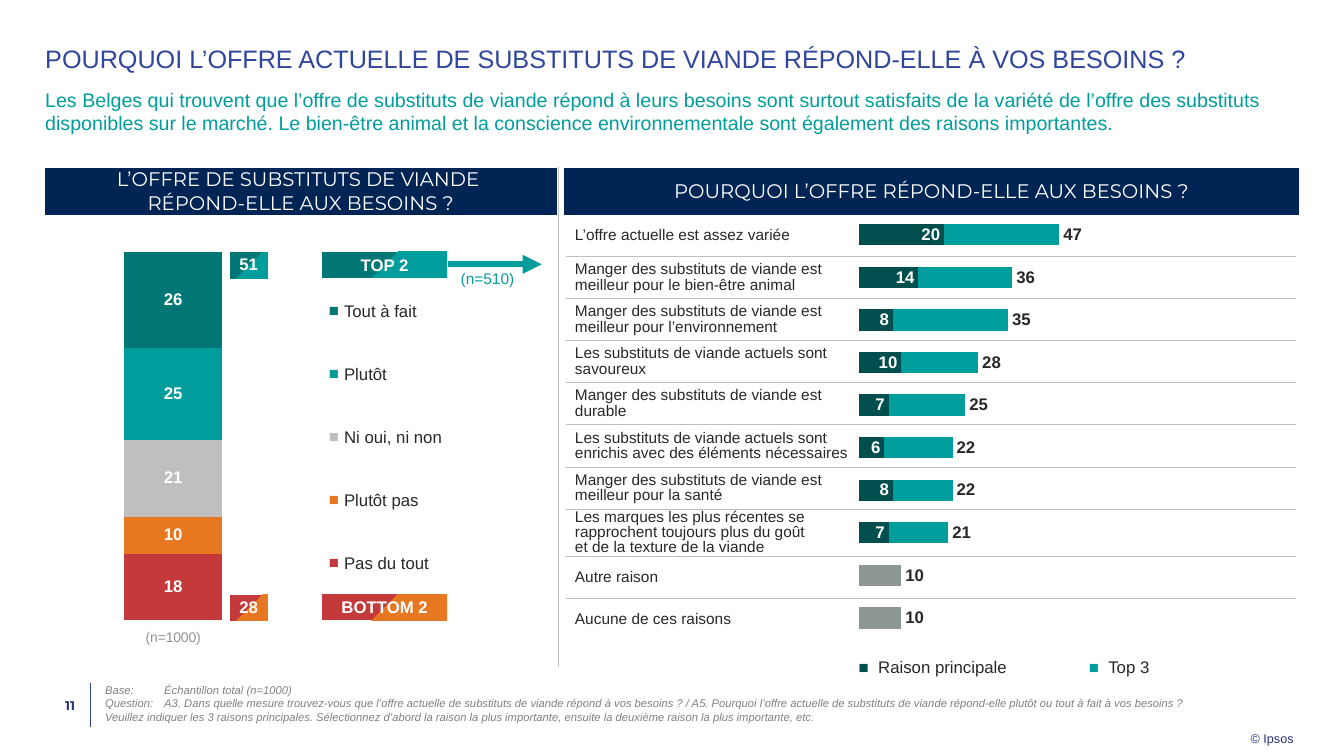
from dataclasses import dataclass

from lxml.etree import SubElement
from pptx import Presentation
from pptx.chart.data import CategoryChartData
from pptx.dml.color import RGBColor
from pptx.enum.chart import XL_CHART_TYPE, XL_LABEL_POSITION, XL_TICK_LABEL_POSITION, XL_TICK_MARK
from pptx.enum.shapes import MSO_CONNECTOR, MSO_SHAPE
from pptx.enum.text import MSO_ANCHOR, MSO_AUTO_SIZE, PP_ALIGN
from pptx.oxml import parse_xml
from pptx.oxml.ns import nsdecls, qn
from pptx.util import Cm, Pt


@dataclass(frozen=True)
class Theme:
    body_font: str = "Arial"
    heading_font: str = "Montserrat"
    title: str = "2F469C"
    navy: str = "002554"
    footer_blue: str = "233475"
    ink: str = "282828"
    note: str = "808080"
    axis: str = "939393"
    rule: str = "BFBFBF"
    white: str = "FFFFFF"
    dark_teal: str = "007675"
    teal: str = "009D9C"
    deep_teal: str = "004E4E"
    grey_bar: str = "8E9696"
    orange: str = "E87722"
    red: str = "C43A3A"
    title_size: int = 18
    heading_size: int = 14
    label_size: int = 12
    reason_size: int = 11
    axis_size: int = 10
    small_size: int = 9
    note_size: int = 8


THEME = Theme()
NO_STYLE = "{2D5ABB26-0587-4C30-8999-92F81FD0307C}"

SATISFACTION = [
    ("Tout à fait", 26, THEME.dark_teal),
    ("Plutôt", 25, THEME.teal),
    ("Ni oui, ni non", 21, THEME.rule),
    ("Plutôt pas", 10, THEME.orange),
    ("Pas du tout", 18, THEME.red),
]
REASONS = [
    ("L’offre actuelle est assez variée", 47, 20),
    ("Manger des substituts de viande est meilleur pour le bien-être animal", 36, 14),
    ("Manger des substituts de viande est meilleur pour l’environnement", 35, 8),
    ("Les substituts de viande actuels sont savoureux", 28, 10),
    ("Manger des substituts de viande est durable", 25, 7),
    ("Les substituts de viande actuels sont enrichis avec des éléments nécessaires", 22, 6),
    ("Manger des substituts de viande est meilleur pour la santé", 22, 8),
    ("Les marques les plus récentes se rapprochent toujours plus du goût\n"
     "et de la texture de la viande", 21, 7),
    ("Autre raison", 10, None),
    ("Aucune de ces raisons", 10, None),
]


def rgb(color):
    return RGBColor.from_string(color)


def style_font(font, size, color, bold=False, italic=False, name=THEME.body_font):
    font.size, font.bold, font.italic, font.name = Pt(size), bold, italic, name
    font.color.rgb = rgb(color)


def write(frame, text, size=THEME.label_size, color=THEME.ink, align=PP_ALIGN.LEFT,
          spacing=None, tab=None, marker=None, **font_format):
    """Fill a text frame, one paragraph per line, with an optional coloured marker."""
    for index, line in enumerate(text.split("\n")):
        paragraph = frame.add_paragraph() if index else frame.paragraphs[0]
        paragraph.alignment = align
        if spacing:
            paragraph.line_spacing = spacing
        if tab:
            tabs = SubElement(paragraph._p.get_or_add_pPr(), qn("a:tabLst"))
            SubElement(tabs, qn("a:tab"), pos=str(Cm(tab)), algn="l")
        for part, part_color in ((("■  ", marker),) if marker else ()) + ((line, color),):
            run = paragraph.add_run()
            run.text = part
            style_font(run.font, size, part_color, **font_format)


def set_margins(owner, left=0, top=0, right=0, bottom=0):
    owner.margin_left, owner.margin_top = Cm(left), Cm(top)
    owner.margin_right, owner.margin_bottom = Cm(right), Cm(bottom)


def add_text(slide, box, text, anchor=MSO_ANCHOR.TOP, margins=(0, 0, 0, 0), wrap=True, **text_format):
    frame = slide.shapes.add_textbox(*map(Cm, box)).text_frame
    frame.word_wrap, frame.vertical_anchor = wrap, anchor
    set_margins(frame, *margins)
    write(frame, text, **text_format)


def add_line(slide, start, end, color, width, arrow=False):
    line = slide.shapes.add_connector(MSO_CONNECTOR.STRAIGHT, *map(Cm, start + end))
    line.line.color.rgb, line.line.width = rgb(color), Pt(width)
    if arrow:
        SubElement(line.line._get_or_add_ln(), qn("a:tailEnd"), type="triangle")
    SubElement(line._element.spPr, qn("a:effectLst"))


def add_badge(slide, box, colors, text=None):
    """Rectangle split diagonally between two colours."""
    badge = slide.shapes.add_shape(MSO_SHAPE.RECTANGLE, *map(Cm, box))
    badge.shadow.inherit = False
    badge.line.fill.background()
    badge.fill.gradient()
    badge.fill.gradient_angle = 315
    for stop, color in zip(badge.fill.gradient_stops, colors):
        stop.position, stop.color.rgb = 0.5, rgb(color)
    if text:
        badge.text_frame.vertical_anchor = MSO_ANCHOR.MIDDLE
        set_margins(badge.text_frame)
        write(badge.text_frame, text, color=THEME.white, align=PP_ALIGN.CENTER, bold=True)


def add_grid(slide, left, top, widths, heights):
    """Unstyled table with middle-anchored, unfilled cells."""
    grid = slide.shapes.add_table(len(heights), len(widths), Cm(left), Cm(top),
                                  Cm(sum(widths)), Cm(sum(heights))).table
    grid.first_row = grid.horz_banding = False
    grid._tbl.tblPr.find(qn("a:tableStyleId")).text = NO_STYLE
    for column, width in zip(grid.columns, widths):
        column.width = Cm(width)
    for row, height in zip(grid.rows, heights):
        row.height = Cm(height)
    for cell in grid.iter_cells():
        cell.fill.background()
        cell.vertical_anchor = MSO_ANCHOR.MIDDLE
        set_margins(cell)
    return grid


def set_border(cell, side, color, width):
    border = parse_xml(f'<a:{side} {nsdecls("a")} w="{Pt(width)}"><a:solidFill>'
                       f'<a:srgbClr val="{color}"/></a:solidFill></a:{side}>')
    properties = cell._tc.get_or_add_tcPr()
    properties.insert(len(properties.findall(qn("a:lnL"))) + len(properties.findall(qn("a:lnT"))), border)


def add_bars(slide, box, kind, categories, series, gap, layout):
    """Series are (values, colour, label colour, label position, label format)."""
    data = CategoryChartData()
    data.categories = categories
    for number, (values, *_) in enumerate(series, 1):
        data.add_series(f"Series {number}", values)
    chart = slide.shapes.add_chart(kind, *map(Cm, box), data).chart
    chart.has_legend = chart.has_title = False
    style_font(chart.font, THEME.axis_size, THEME.axis)
    plot = chart.plots[0]
    plot.gap_width, plot.overlap, plot.vary_by_categories = gap, 100, False
    for bars, (_, color, label_color, position, number_format) in zip(plot.series, series):
        bars.format.fill.solid()
        bars.format.fill.fore_color.rgb = rgb(color)
        labels = bars.data_labels
        labels.show_value, labels.position = True, position
        labels.number_format, labels.number_format_is_linked = number_format, False
        style_font(labels.font, THEME.label_size, label_color, bold=True)
    for axis in (chart.category_axis, chart.value_axis):
        axis.has_major_gridlines = False
        axis.major_tick_mark = axis.minor_tick_mark = XL_TICK_MARK.NONE
        axis.tick_label_position = XL_TICK_LABEL_POSITION.NONE
        axis.format.line.fill.background()
    chart.value_axis.minimum_scale, chart.value_axis.maximum_scale = 0, 100
    # Fixed inner plot area
    area = chart._chartSpace.find(qn("c:chart")).find(qn("c:plotArea"))
    for old_layout in area.findall(qn("c:layout")):
        area.remove(old_layout)
    parts = '<c:layoutTarget val="inner"/><c:xMode val="edge"/><c:yMode val="edge"/>'
    parts += "".join(f'<c:{key} val="{value}"/>' for key, value in zip("xywh", layout))
    area.insert(0, parse_xml(f'<c:layout {nsdecls("c")}><c:manualLayout>{parts}</c:manualLayout></c:layout>'))
    return chart


def add_headings(slide):
    title = slide.shapes.title
    title.left, title.top, title.width, title.height = map(Cm, (1.14, 1.17, 31.6, 1.07))
    title.text_frame.auto_size = MSO_AUTO_SIZE.NONE
    title.text_frame.vertical_anchor = MSO_ANCHOR.TOP
    set_margins(title.text_frame)
    write(title.text_frame, "POURQUOI L’OFFRE ACTUELLE DE SUBSTITUTS DE VIANDE RÉPOND-ELLE À VOS BESOINS ?",
          size=THEME.title_size, color=THEME.title, spacing=0.9)
    add_text(slide, (1.14, 2.12, 31.6, 2.01),
             "Les Belges qui trouvent que l’offre de substituts de viande répond à leurs besoins sont surtout "
             "satisfaits de la variété de l’offre des substituts disponibles sur le marché. Le bien-être animal "
             "et la conscience environnementale sont également des raisons importantes.",
             margins=(0, 0.09, 0, 0), size=THEME.heading_size, color=THEME.teal)
    banner = add_grid(slide, 1.04, 4.23, [13.08] + [6.24] * 3, [1.19, 0.99])
    banner.cell(0, 1).merge(banner.cell(0, 3))
    headings = ("L’OFFRE DE SUBSTITUTS DE VIANDE \nRÉPOND-ELLE AUX BESOINS ?",
                "POURQUOI L’OFFRE RÉPOND-ELLE AUX BESOINS ?")
    for column, heading in enumerate(headings):
        cell = banner.cell(0, column)
        cell.fill.solid()
        cell.fill.fore_color.rgb = rgb(THEME.navy)
        for side in ("lnR", "lnL"):
            set_border(cell, side, THEME.white, 6)
        write(cell.text_frame, heading, size=THEME.heading_size, color=THEME.white,
              align=PP_ALIGN.CENTER, name=THEME.heading_font)


def add_satisfaction(slide):
    series = [([value], color, THEME.white, XL_LABEL_POSITION.CENTER, "0;0;")
              for _, value, color in SATISFACTION]
    chart = add_bars(slide, (1.14, 5.92, 6.45, 11.1), XL_CHART_TYPE.COLUMN_STACKED, ["(n=1000)\n"],
                     series, 160, (0, 0.039, 1, 0.835))
    chart.value_axis.reverse_order = True
    chart.category_axis.tick_label_position = XL_TICK_LABEL_POSITION.HIGH
    # Answer legend
    legend = add_grid(slide, 7.85, 7.03, [0.79, 5], [1.59] * len(SATISFACTION))
    for row, (label, _, color) in enumerate(SATISFACTION):
        marker_cell, label_cell = legend.cell(row, 0), legend.cell(row, 1)
        set_margins(marker_cell, left=0.1, right=0.1)
        set_margins(label_cell, left=0.03, top=0.03, right=0.03)
        write(marker_cell.text_frame, "■", color=color, align=PP_ALIGN.RIGHT)
        write(label_cell.text_frame, label)
    # Totals of the two best and two worst answers
    for top, total, label, colors in ((6.34, "51", "TOP 2", (THEME.dark_teal, THEME.teal)),
                                      (14.97, "28", "BOTTOM 2", (THEME.red, THEME.orange))):
        add_badge(slide, (5.8, top + 0.02, 0.95, 0.66), colors)
        total_cell = add_grid(slide, 3.04, top, [6.45], [0.66]).cell(0, 0)
        write(total_cell.text_frame, total, color=THEME.white, align=PP_ALIGN.CENTER, bold=True)
        add_badge(slide, (8.12, top, 3.15, 0.66), colors, label)
    add_line(slide, (11.28, 6.66), (13.65, 6.66), THEME.teal, 4.5, arrow=True)
    add_text(slide, (11.61, 6.78, 2.11, 0.48), "(n=510)", size=THEME.reason_size, color=THEME.teal)


def add_reasons(slide):
    heights = [1.19 if "\n" in reason else 1.06 for reason, *_ in REASONS]
    grid = add_grid(slide, 14.26, 5.4, [7.39, 11], heights)
    for index, (reason, *_) in enumerate(REASONS):
        reason_cell = grid.cell(index, 0)
        set_margins(reason_cell, left=0.23, top=0.03, right=0.03)
        write(reason_cell.text_frame, reason, size=THEME.reason_size, spacing=Pt(11))
        for cell in (reason_cell, grid.cell(index, 1)):
            if index:
                set_border(cell, "lnT", THEME.rule, 0.25)
            if index < len(REASONS) - 1:
                set_border(cell, "lnB", THEME.rule, 0.25)
    _, top_three, main_reason = zip(*REASONS)
    series = [(top_three, THEME.teal, THEME.ink, XL_LABEL_POSITION.OUTSIDE_END, "0"),
              (main_reason, THEME.deep_teal, THEME.white, XL_LABEL_POSITION.INSIDE_END, "0;0;")]
    chart = add_bars(slide, (21.54, 5.37, 11.13, 10.74), XL_CHART_TYPE.BAR_CLUSTERED,
                     [str(rank + 1) for rank in range(len(REASONS))], series, 100, (0.009, 0.001, 0.967, 0.999))
    chart.category_axis.reverse_order = True
    for index, value in enumerate(main_reason):
        if value is None:
            fill = chart.plots[0].series[0].points[index].format.fill
            fill.solid()
            fill.fore_color.rgb = rgb(THEME.grey_bar)
    # Reason legend
    legend = add_grid(slide, 21.54, 16.41, [5.8, 2.91], [0.81])
    for cell, color, label in zip(legend.iter_cells(), (THEME.deep_teal, THEME.teal), ("Raison principale", "Top 3")):
        set_margins(cell, left=0.1, right=0.1)
        write(cell.text_frame, label, marker=color)


def add_footer(slide):
    add_text(slide, (1.14, 17.22, 1.14, 1.09), "11 ", anchor=MSO_ANCHOR.MIDDLE, margins=(0, 0, 0.3, 0),
             size=THEME.small_size, color=THEME.footer_blue, align=PP_ALIGN.RIGHT, bold=True, name=THEME.heading_font)
    add_line(slide, (2.28, 17.22), (2.28, 18.33), THEME.title, 0.5)
    add_text(slide, (2.65, 17.22, 27.99, 1.02),
             "Base:\tÉchantillon total (n=1000)\n"
             "Question:\tA3. Dans quelle mesure trouvez-vous que l’offre actuelle de substituts de viande répond à "
             "vos besoins ? / A5. Pourquoi l’offre actuelle de substituts de viande répond-elle plutôt ou tout à "
             "fait à vos besoins ?\nVeuillez indiquer les 3 raisons principales. Sélectionnez d’abord la raison la "
             "plus importante, ensuite la deuxième raison la plus importante, etc.",
             size=THEME.note_size, color=THEME.note, italic=True, tab=1.49)
    add_text(slide, (31.52, 18.33, 1.1, 0.48), "© Ipsos", margins=(0, 0.1, 0, 0), wrap=False,
             size=THEME.small_size, color=THEME.footer_blue)


def main():
    deck = Presentation()
    deck.slide_width, deck.slide_height = Cm(33.87), Cm(19.05)
    slide = deck.slides.add_slide(deck.slide_layouts[5])
    add_headings(slide)
    add_satisfaction(slide)
    add_reasons(slide)
    add_line(slide, (14.07, 4.22), (14.07, 16.81), THEME.rule, 0.5)
    add_footer(slide)
    deck.save("out.pptx")


if __name__ == "__main__":
    main()
